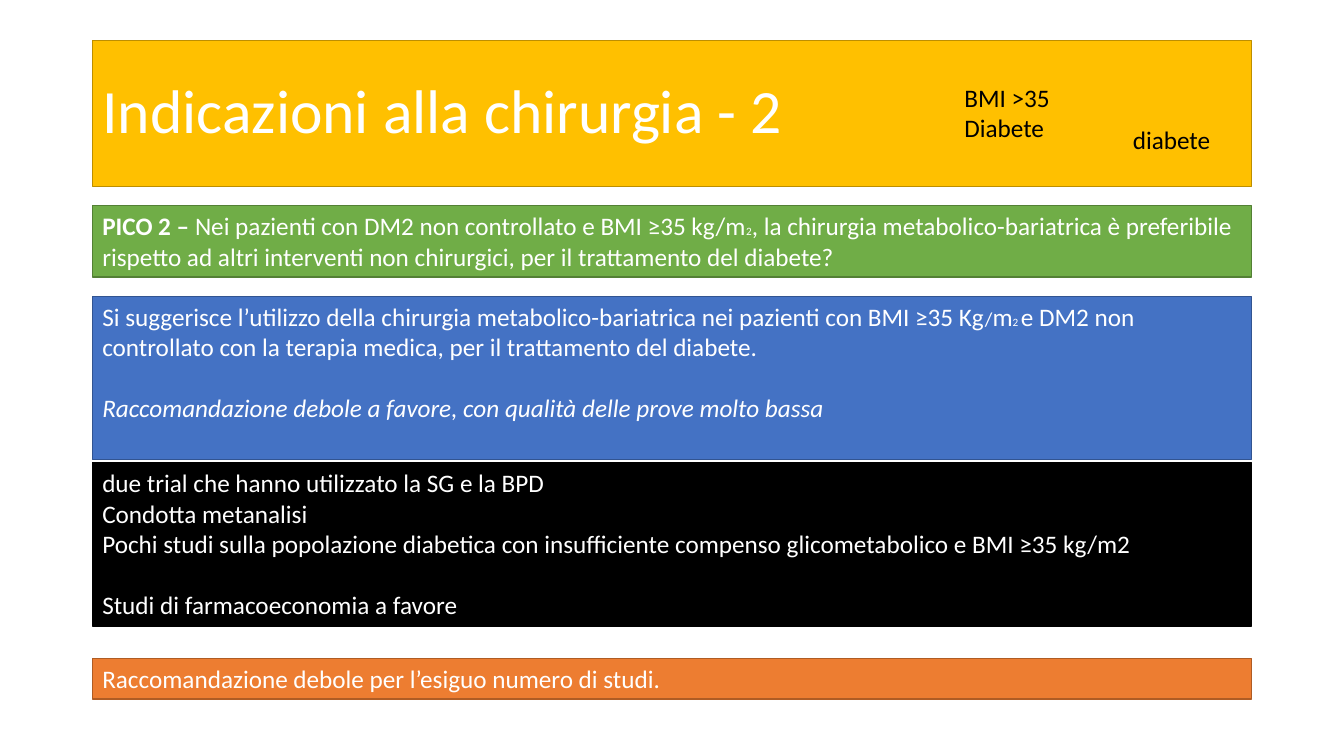
from pptx import Presentation
from pptx.dml.color import RGBColor
from pptx.enum.shapes import MSO_SHAPE as SHAPE
from pptx.enum.text import MSO_ANCHOR as ANCHOR, MSO_AUTO_SIZE as AUTO, PP_ALIGN as ALIGN
from pptx.util import Pt

LEFT, WIDTH = 66, 828
BLANK_LINE = 22


def rgb(value):
    return RGBColor.from_string(value)


class Deck:
    font, size = "Calibri", 18
    white, black = "FFFFFF", "000000"

    def __init__(self, width, height):
        self.prs = Presentation()
        self.prs.slide_width, self.prs.slide_height = Pt(width), Pt(height)

    def add_slide(self):
        self.s = self.prs.slides.add_slide(self.prs.slide_layouts[5])

    def paint(self, sp, fill, line):
        sp.fill.solid()
        sp.fill.fore_color.rgb = rgb(fill)
        sp.line.color.rgb = rgb(line)
        sp.line.width = Pt(1)

    def add_text(self, tf, paragraphs, color):
        """Each paragraph is (runs, space before, italic); each run is (text, size, bold)."""
        tf.word_wrap = True
        tf.vertical_anchor = ANCHOR.TOP
        for i, (runs, before, italic) in enumerate(paragraphs):
            p = tf.paragraphs[0] if i == 0 else tf.add_paragraph()
            p.alignment = ALIGN.LEFT
            if before:
                p.space_before = Pt(before)
            p.font.name = self.font
            p.font.size = Pt(self.size)
            p.font.color.rgb = rgb(color)
            p.font.italic = italic
            for text, size, bold in runs:
                r = p.add_run()
                r.text = text
                if size != self.size:
                    r.font.size = Pt(size)
                if bold:
                    r.font.bold = True

    def title(self, text, top, height, fill, line):
        sp = self.s.shapes.title
        sp.left, sp.top, sp.width, sp.height = Pt(LEFT), Pt(top), Pt(WIDTH), Pt(height)
        self.paint(sp, fill, line)
        tf = sp.text_frame
        tf.text = text
        tf.auto_size = AUTO.NONE
        tf.vertical_anchor = ANCHOR.MIDDLE
        p = tf.paragraphs[0]
        p.alignment = ALIGN.LEFT
        p.line_spacing = 0.9
        p.font.name = self.font
        p.font.size = Pt(44)
        p.font.color.rgb = rgb(self.white)

    def band(self, top, height, fill, line, paragraphs):
        sp = self.s.shapes.add_shape(SHAPE.RECTANGLE, Pt(LEFT), Pt(top), Pt(WIDTH), Pt(height))
        sp.shadow.inherit = False
        self.paint(sp, fill, line)
        self.add_text(sp.text_frame, paragraphs, self.white)

    def label(self, left, top, width, height, paragraphs):
        sp = self.s.shapes.add_textbox(Pt(left), Pt(top), Pt(width), Pt(height))
        self.add_text(sp.text_frame, paragraphs, self.black)


def plain(text, before=0, italic=False):
    """A paragraph with one run at the normal size."""
    return [(text, Deck.size, False)], before, italic


def mixed(*runs):
    """A paragraph with runs of several sizes or weights."""
    return runs, 0, False


def main():
    deck = Deck(960, 540)
    deck.add_slide()
    deck.title("Indicazioni alla chirurgia - 2", 28.8, 104.4, "FFC000", "BD8E00")
    deck.band(146.9, 50.9, "70AD47", "538035", [mixed(
        ("PICO 2 – ", 18, True),
        ("Nei pazienti con DM2 non controllato e BMI ≥35 kg/m", 18, False),
        ("2", 8, False),
        (", la chirurgia metabolico-bariatrica è preferibile rispetto ad altri "
         "interventi non chirurgici, per il trattamento del diabete?", 18, False))])
    deck.band(211.7, 116.7, "4472C4", "325491", [
        mixed(
            ("Si suggerisce l’utilizzo della chirurgia metabolico-bariatrica "
             "nei pazienti con BMI ≥35 Kg", 18, False),
            ("/", 14, False),
            ("m", 18, False),
            ("2 ", 8, False),
            ("e DM2 non controllato con la terapia medica, "
             "per il trattamento del diabete.", 18, False)),
        plain("Raccomandazione debole a favore, con qualità delle prove molto bassa",
              BLANK_LINE, True)])
    deck.band(330.5, 116.7, "000000", "000000", [
        plain("due trial che hanno utilizzato la SG e la BPD"),
        plain("Condotta metanalisi"),
        plain("Pochi studi sulla popolazione diabetica con insufficiente compenso "
              "glicometabolico e BMI ≥35 kg/m2"),
        plain("Studi di farmacoeconomia a favore", BLANK_LINE)])
    deck.band(470.2, 29.1, "ED7D31", "AF5C24",
              [plain("Raccomandazione debole per l’esiguo numero di studi.")])
    deck.label(681.8, 55.4, 193.7, 50.9, [plain("BMI >35"), plain("Diabete")])
    deck.label(802.1, 85, 73.4, 29.1, [plain("diabete")])
    deck.prs.save("out.pptx")


if __name__ == "__main__":
    main()
